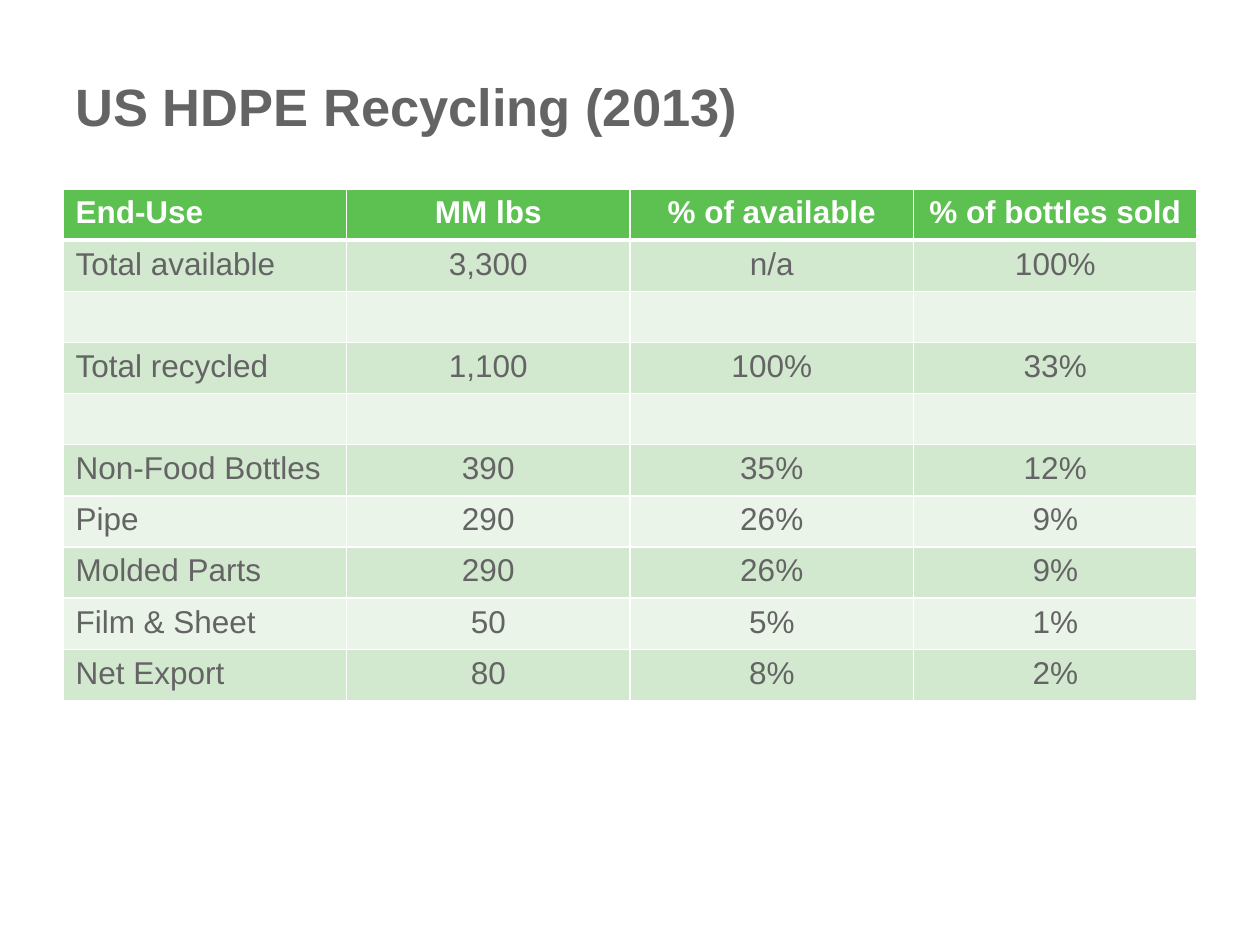
import pptx
import pptx.dml.color
import pptx.enum.text
import pptx.oxml
import pptx.oxml.ns
import pptx.util

SLIDE_WIDTH, SLIDE_HEIGHT = 10, 7.5
MARGIN = 0.05 * SLIDE_WIDTH
CONTENT_WIDTH = SLIDE_WIDTH - 2 * MARGIN
TABLE_TOP = 0.2 * SLIDE_HEIGHT
TABLE_HEIGHT = 4.06
FONT = "Arial"
COLORS = {
    "text": "646464",
    "white": "FFFFFF",
    "header": "5CC151",
    "band_dark": "D2E9D0",
    "band_light": "EAF4E9",
}
ALIGN = pptx.enum.text.PP_ALIGN
ROWS = [
    ("End-Use", "MM lbs", "% of available", "% of bottles sold"),
    ("Total available", "3,300", "n/a", "100%"),
    ("", "", "", ""),
    ("Total recycled", "1,100", "100%", "33%"),
    ("", "", "", ""),
    ("Non-Food Bottles", "390", "35%", "12%"),
    ("Pipe", "290", "26%", "9%"),
    ("Molded Parts", "290", "26%", "9%"),
    ("Film & Sheet", "50", "5%", "1%"),
    ("Net Export", "80", "8%", "2%"),
]


def rgb(name):
    return pptx.dml.color.RGBColor.from_string(COLORS[name])


def write_text(frame, text, size=18, color="text", bold=False, align=ALIGN.LEFT):
    paragraph = frame.paragraphs[0]
    paragraph.alignment = align
    if not text:
        return
    run = paragraph.add_run()
    run.text = text
    run.font.name = FONT
    run.font.size = pptx.util.Pt(size)
    run.font.bold = bold
    run.font.color.rgb = rgb(color)


def set_borders(cell, **widths):
    """Draw white borders; widths are points by side, in the order L, R, T, B."""
    properties = cell._tc.get_or_add_tcPr()
    for side, width in widths.items():
        properties.append(pptx.oxml.parse_xml(
            f'<a:ln{side} {pptx.oxml.ns.nsdecls("a")} w="{pptx.util.Pt(width)}">'
            f'<a:solidFill><a:srgbClr val="{COLORS["white"]}"/></a:solidFill>'
            f'</a:ln{side}>'))


def format_title(slide, text):
    title = slide.shapes.title
    title.left = title.top = pptx.util.Inches(MARGIN)
    title.width = pptx.util.Inches(CONTENT_WIDTH)
    title.height = pptx.util.Inches(TABLE_TOP - MARGIN)
    frame = title.text_frame
    frame.vertical_anchor = pptx.enum.text.MSO_ANCHOR.TOP
    frame.margin_top = pptx.util.Inches(0.09)
    write_text(frame, text, size=30, bold=True)


def add_banded_table(slide, rows):
    table = slide.shapes.add_table(
        len(rows), len(rows[0]),
        pptx.util.Inches(MARGIN), pptx.util.Inches(TABLE_TOP),
        pptx.util.Inches(CONTENT_WIDTH), pptx.util.Inches(TABLE_HEIGHT)).table
    for row_index, values in enumerate(rows):
        is_header = row_index == 0
        band = "band_dark" if row_index % 2 else "band_light"
        for column_index, value in enumerate(values):
            cell = table.cell(row_index, column_index)
            set_borders(cell, L=1, R=1, T=3 if row_index == 1 else 1,
                        B=3 if is_header else 1)
            cell.fill.solid()
            cell.fill.fore_color.rgb = rgb("header" if is_header else band)
            write_text(cell.text_frame, value, bold=is_header,
                       color="white" if is_header else "text",
                       align=ALIGN.CENTER if column_index else ALIGN.LEFT)


def main():
    presentation = pptx.Presentation()
    presentation.slide_width = pptx.util.Inches(SLIDE_WIDTH)
    presentation.slide_height = pptx.util.Inches(SLIDE_HEIGHT)
    slide = presentation.slides.add_slide(presentation.slide_layouts[5])
    format_title(slide, "US HDPE Recycling (2013)")
    add_banded_table(slide, ROWS)
    presentation.save("out.pptx")


if __name__ == "__main__":
    main()
